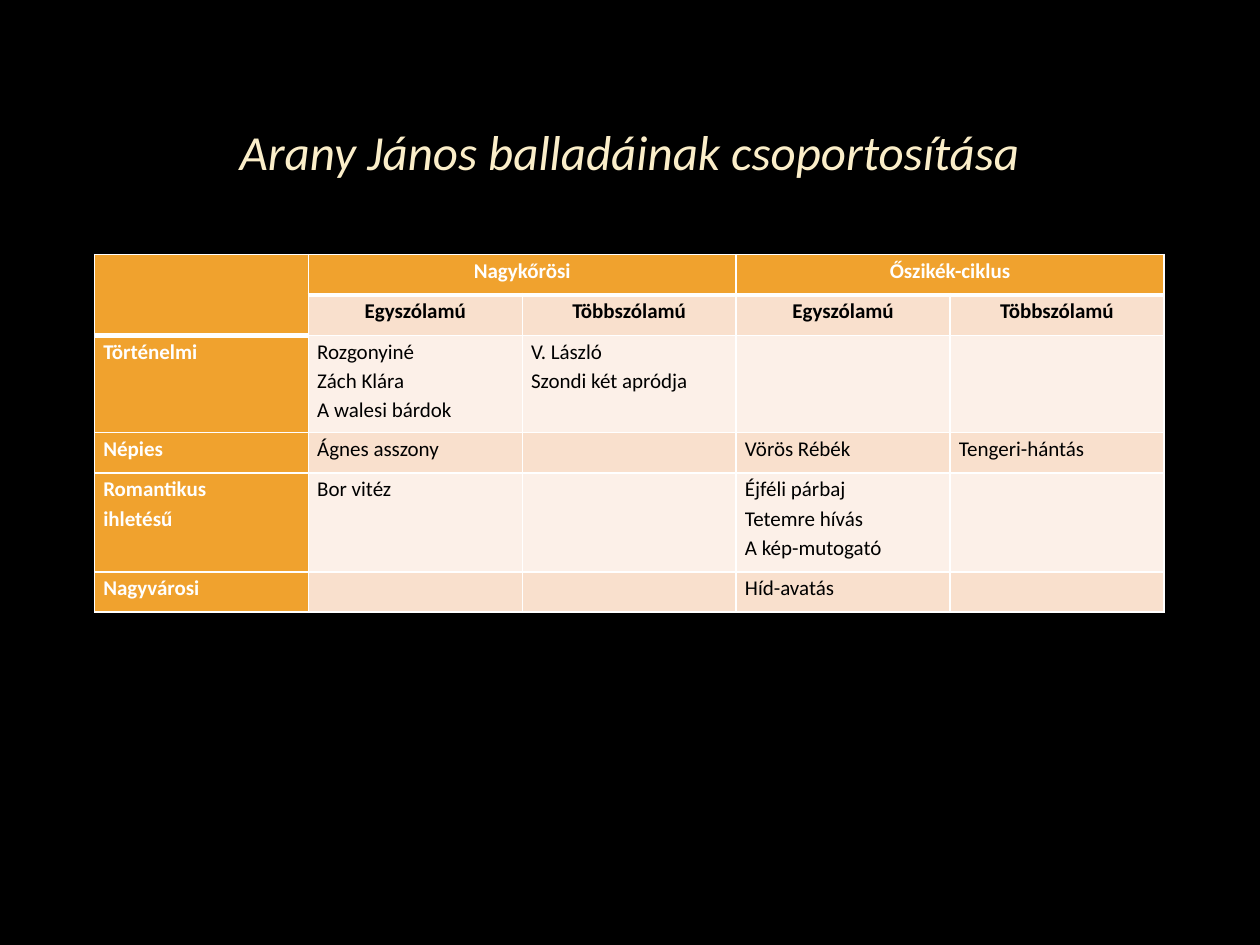
from lxml import etree
from pptx import Presentation
from pptx import util as u
from pptx.dml.color import RGBColor
from pptx.enum import text
from pptx.oxml.ns import qn

BLACK = RGBColor(0x00, 0x00, 0x00)
WHITE = RGBColor(0xFF, 0xFF, 0xFF)
CREAM = RGBColor(0xFB, 0xEE, 0xC9)
ORANGE = RGBColor(0xF0, 0xA2, 0x2E)
PEACH = RGBColor(0xF9, 0xE0, 0xCD)
PALE = RGBColor(0xFC, 0xF0, 0xE8)
FONT = "Calibri"

ROW_HEIGHTS = [0.32, 0.32, 0.77, 0.32, 0.78, 0.32]
BALLADS = [
    ["", "Nagykőrösi", "", "Őszikék-ciklus", ""],
    ["", "Egyszólamú", "Többszólamú", "Egyszólamú", "Többszólamú"],
    ["Történelmi", "Rozgonyiné\nZách Klára\nA walesi bárdok",
     "V. László\nSzondi két apródja", "", ""],
    ["Népies", "Ágnes asszony", "", "Vörös Rébék", "Tengeri-hántás"],
    ["Romantikus\nihletésű", "Bor vitéz", "",
     "Éjféli párbaj\nTetemre hívás\nA kép-mutogató", ""],
    ["Nagyvárosi", "", "", "Híd-avatás", ""],
]


def add_run(paragraph, wording, size, color, bold=False, italic=False):
    run = paragraph.add_run()
    run.text = wording
    font = run.font
    font.name, font.size = FONT, u.Pt(size)
    font.bold, font.italic = bold, italic
    font.color.rgb = color


def add_title(slide, left, top, width, height):
    title = slide.shapes.title
    title.left, title.top, title.width, title.height = left, top, width, height
    frame = title.text_frame
    frame.vertical_anchor = text.MSO_ANCHOR.MIDDLE
    paragraph = frame.paragraphs[0]
    paragraph.alignment = text.PP_ALIGN.CENTER
    add_run(paragraph, "Arany János balladáinak csoportosítása", 28, CREAM, italic=True)


def set_borders(cell, top, bottom):
    properties = cell._tc.get_or_add_tcPr()
    for side, points in (("L", 1), ("R", 1), ("T", top), ("B", bottom)):
        line = etree.SubElement(properties, qn(f"a:ln{side}"), w=str(u.Pt(points)))
        fill = etree.SubElement(line, qn("a:solidFill"))
        etree.SubElement(fill, qn("a:srgbClr"), val=str(WHITE))


def format_cell(cell, row, column, wording):
    heading = row == 0 or column == 0
    header_end = 1 if column == 0 else 0
    set_borders(cell,
                top=3 if row == header_end + 1 else 1,
                bottom=3 if row in (0, header_end) else 1)
    cell.fill.solid()
    cell.fill.fore_color.rgb = ORANGE if heading else PEACH if row % 2 else PALE
    cell.margin_left = cell.margin_right = u.Inches(0.07)
    cell.margin_top = cell.margin_bottom = 0
    if not wording:
        return
    frame = cell.text_frame
    for index, line in enumerate(wording.split("\n")):
        paragraph = frame.add_paragraph() if index else frame.paragraphs[0]
        paragraph.line_spacing = 1.15
        paragraph.alignment = text.PP_ALIGN.CENTER if row < 2 else text.PP_ALIGN.LEFT
        add_run(paragraph, line, 12, WHITE if heading else BLACK, bold=heading or row == 1)


def add_ballad_table(slide, left, top, width, height):
    rows, columns = len(BALLADS), len(BALLADS[0])
    table = slide.shapes.add_table(rows, columns, left, top, width, height).table
    for column in table.columns:
        column.width = int(width / columns)
    for row, row_height in zip(table.rows, ROW_HEIGHTS):
        row.height = int(height * row_height / sum(ROW_HEIGHTS))
    for row, wordings in enumerate(BALLADS):
        for column, wording in enumerate(wordings):
            format_cell(table.cell(row, column), row, column, wording)
    table.cell(0, 0).merge(table.cell(1, 0))
    for column in (1, 3):
        table.cell(0, column).merge(table.cell(0, column + 1))


def main():
    presentation = Presentation()
    presentation.slide_width, presentation.slide_height = u.Inches(10), u.Inches(7.5)
    slide = presentation.slides.add_slide(presentation.slide_layouts[5])
    slide.background.fill.solid()
    slide.background.fill.fore_color.rgb = BLACK
    left, width = u.Inches(0.75), u.Inches(8.49)
    add_title(slide, left, u.Inches(0.67), width, u.Inches(1.06))
    add_ballad_table(slide, left, u.Inches(2.02), width, u.Inches(2.84))
    presentation.save("out.pptx")


if __name__ == "__main__":
    main()
